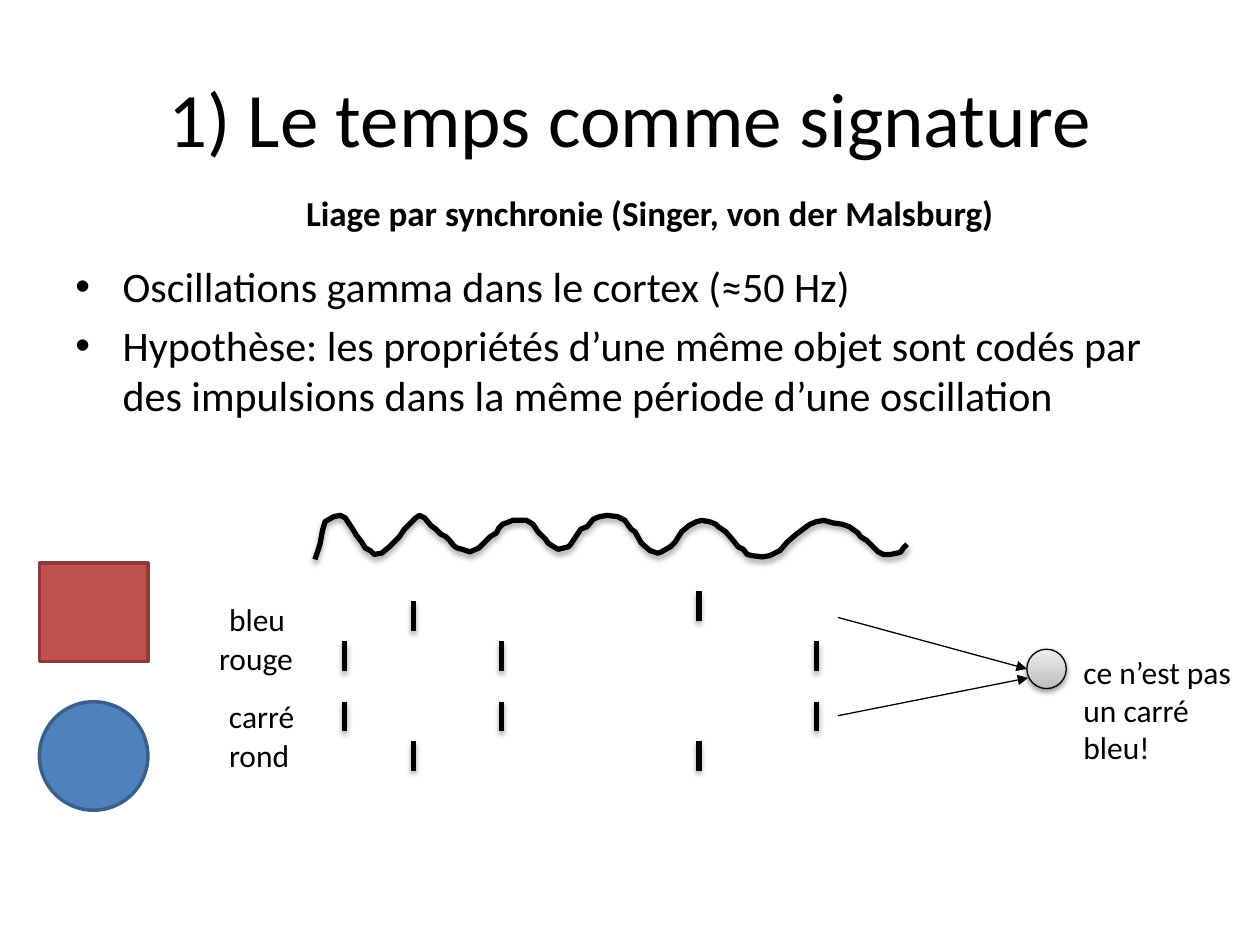
from lxml import etree
from pptx import Presentation
from pptx.dml.color import RGBColor
from pptx.enum.shapes import MSO_CONNECTOR, MSO_SHAPE
from pptx.enum.text import MSO_ANCHOR, PP_ALIGN
from pptx.oxml.ns import qn
from pptx.util import Pt

LINE = MSO_CONNECTOR.STRAIGHT
RECT, OVAL = MSO_SHAPE.RECTANGLE, MSO_SHAPE.OVAL
LEFT, CENTER = PP_ALIGN.LEFT, PP_ALIGN.CENTER
TOP, MIDDLE = MSO_ANCHOR.TOP, MSO_ANCHOR.MIDDLE

BLACK = RGBColor(0x00, 0x00, 0x00)
RED, MAROON = RGBColor(0xC0, 0x50, 0x4D), RGBColor(0x8E, 0x3B, 0x39)
BLUE, NAVY = RGBColor(0x4F, 0x81, 0xBD), RGBColor(0x3A, 0x5F, 0x8C)
GRAY, PALE = RGBColor(0xBD, 0xBD, 0xBD), RGBColor(0xEE, 0xEE, 0xEE)

# Wave points, in hundredths of an inch
UNIT = Pt(0.72)
WAVE = [
    (250, 444), (254, 432), (256, 421), (258, 414), (265, 410), (270, 409),
    (274, 411), (280, 420), (283, 425), (287, 430), (290, 435), (294, 437),
    (297, 440), (303, 439), (309, 434), (317, 426), (321, 420), (326, 415),
    (330, 411), (333, 409), (337, 411), (342, 417), (346, 420), (350, 424),
    (354, 426), (357, 429), (360, 433), (363, 435), (367, 436), (373, 438),
    (380, 435), (387, 428), (389, 426), (394, 423), (396, 419), (399, 416),
    (402, 415), (407, 413), (412, 413), (418, 413), (423, 416), (427, 422),
    (433, 428), (435, 431), (438, 433), (443, 436), (451, 434), (453, 432),
    (457, 426), (461, 420), (466, 418), (471, 412), (476, 410), (482, 409),
    (490, 410), (496, 413), (501, 420), (504, 422), (509, 431), (516, 437),
    (522, 439), (525, 438), (532, 434), (536, 430), (541, 422), (547, 417),
    (553, 414), (557, 413), (563, 414), (568, 416), (570, 418), (576, 422),
    (582, 429), (586, 434), (590, 436), (593, 440), (597, 441), (605, 442),
    (611, 441), (619, 437), (625, 430), (632, 424), (640, 418), (643, 416),
    (648, 414), (654, 413), (661, 415), (668, 416), (674, 418), (681, 423),
    (683, 426), (688, 429), (693, 434), (697, 438), (701, 440), (707, 440),
    (712, 439), (715, 438), (717, 435), (720, 432),
]


class Page:
    font = "Calibri"
    color = BLACK

    def __init__(self, slide):
        self.slide = slide
        self.shapes = slide.shapes

    def text(self, box, lines, size, bold=False, align=LEFT, anchor=TOP,
             wrap=True):
        shape = self.shapes.add_textbox(*map(Pt, box))
        frame = shape.text_frame
        frame.word_wrap = wrap
        frame.vertical_anchor = anchor
        frame.text = lines
        for para in frame.paragraphs:
            para.alignment = align
            for run in para.runs:
                run.font.name, run.font.size = self.font, Pt(size)
                run.font.bold = bold
                run.font.color.rgb = self.color
        return frame

    def bullets(self, box, lines, size):
        for para in self.text(box, lines, size).paragraphs:
            para.space_before = Pt(0.2 * size)
            props = para._p.get_or_add_pPr()
            props.set("marL", str(Pt(27)))
            props.set("indent", str(-Pt(27)))
            etree.SubElement(props, qn("a:buFont"), typeface="Arial")
            etree.SubElement(props, qn("a:buChar"), char="•")

    def shape(self, kind, box, fill, line, width):
        shape = self.shapes.add_shape(kind, *map(Pt, box))
        shape.shadow.inherit = False
        shape.fill.solid()
        shape.fill.fore_color.rgb = fill
        self.stroke(shape, line, width)
        return shape

    def ball(self, box):
        ball = self.shape(OVAL, box, GRAY, BLACK, 0.75)
        ball.fill.gradient()
        ball.fill.gradient_angle = 90
        for stop, color in zip(ball.fill.gradient_stops, (GRAY, PALE)):
            stop.color.rgb = color
        self.shade(ball, 38, 1.6)

    def stroke(self, shape, color, width):
        shape.line.color.rgb = color
        shape.line.width = Pt(width)

    def shade(self, shape, alpha=35, dist=1.8):
        props = shape._element.spPr
        effect = props.find(qn("a:effectLst"))
        if effect is None:
            effect = etree.SubElement(props, qn("a:effectLst"))
        cast = etree.SubElement(
            effect, qn("a:outerShdw"), blurRad=str(Pt(3.1)),
            dist=str(Pt(dist)), dir="5400000", rotWithShape="0")
        color = etree.SubElement(cast, qn("a:srgbClr"), val=str(BLACK))
        etree.SubElement(color, qn("a:alpha"), val=str(alpha * 1000))

    def line(self, ends, width):
        line = self.shapes.add_connector(LINE, *map(Pt, ends))
        self.stroke(line, self.color, width)
        etree.SubElement(line._element.spPr, qn("a:effectLst"))
        return line

    def tick(self, x, y):
        self.shade(self.line((x, y, x, y + 17), 3))

    def arrow(self, ends):
        line = self.line(ends, 0.75)
        etree.SubElement(line.line._get_or_add_ln(), qn("a:tailEnd"),
                         type="triangle")

    def wave(self, points):
        pen = self.shapes.build_freeform(*points[0], scale=UNIT)
        pen.add_line_segments(points[1:], close=False)
        shape = pen.convert_to_shape()
        shape.shadow.inherit = False
        shape.fill.background()
        self.stroke(shape, self.color, 3)
        self.shade(shape)


def main():
    deck = Presentation()
    deck.slide_width, deck.slide_height = Pt(720), Pt(540)
    page = Page(deck.slides.add_slide(deck.slide_layouts[6]))

    # Heading and bullets
    page.text((36, 21.6, 648, 90), "1) Le temps comme signature", 44,
              align=CENTER, anchor=MIDDLE)
    page.text((167.8, 105.8, 413, 31.5),
              "Liage par synchronie (Singer, von der Malsburg)", 20,
              bold=True, wrap=False)
    page.bullets((36, 145.4, 648, 356.4),
                 "Oscillations gamma dans le cortex (≈50 Hz)\n"
                 "Hypothèse: les propriétés d’une même objet sont codés par "
                 "des impulsions dans la même période d’une oscillation", 24)

    # Oscillation and the two objects
    page.wave(WAVE)
    page.shape(RECT, (22.5, 321.8, 62, 56.2), RED, MAROON, 2)
    page.shape(OVAL, (22.5, 401, 62, 62), BLUE, NAVY, 2)

    # Feature labels
    for word, x, y, width in (("bleu", 123.8, 339.1, 49),
                              ("rouge", 118.1, 361.8, 61),
                              ("carré", 123.8, 394.6, 56),
                              ("rond", 123.8, 417.2, 51)):
        page.text((x, y, width, 29), word, 18, wrap=False)

    # Impulses: red square, then blue circle
    for y in (366.5, 401):
        for x in (197, 286.6, 466.6):
            page.tick(x, y)
    for x, high in ((236.2, 343.6), (399.4, 338)):
        for y in (high, 423.4):
            page.tick(x, y)

    # Detector neuron
    page.ball((586.8, 371, 22.5, 22.5))
    page.arrow((478.8, 352.8, 586.8, 382.2))
    page.arrow((478.8, 409, 587.5, 387.4))
    page.text((612, 369.5, 111.6, 72.7), "ce n’est pas un carré bleu!", 18)

    deck.save("out.pptx")


if __name__ == "__main__":
    main()
